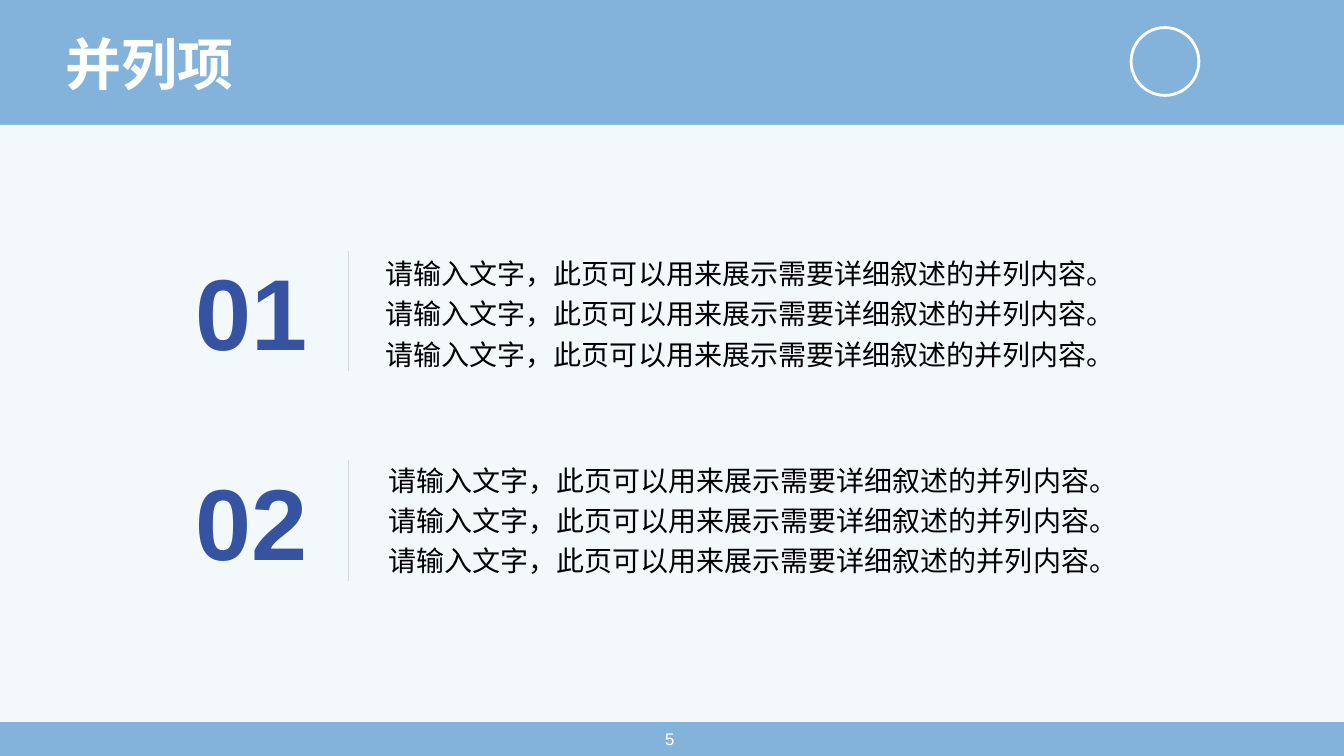
from dataclasses import dataclass

import lxml.etree
import pptx
import pptx.dml.color
import pptx.enum.shapes
import pptx.enum.text
import pptx.oxml.ns
import pptx.shapes.base
import pptx.slide
import pptx.text.text
import pptx.util

Cm = pptx.util.Cm
Pt = pptx.util.Pt
RGBColor = pptx.dml.color.RGBColor
PP_ALIGN = pptx.enum.text.PP_ALIGN
MSO_ANCHOR = pptx.enum.text.MSO_ANCHOR
MSO_SHAPE = pptx.enum.shapes.MSO_SHAPE
qn = pptx.oxml.ns.qn

SKY = RGBColor(0x83, 0xB3, 0xDB)
WHITE = RGBColor(0xFF, 0xFF, 0xFF)
BLACK = RGBColor(0, 0, 0)
NAVY = RGBColor(0x35, 0x53, 0xA0)
GREY = RGBColor(0xD9, 0xD9, 0xD9)

LATIN_FONT = "Arial"
CJK_FONT = "Noto Sans CJK SC"
SLIDE_W, SLIDE_H = 33.87, 19.05
ITEM_TOP, ITEM_PITCH = 6.17, 5.28
RULE_X, RULE_OFFSET, RULE_H = 8.79, 0.15, 3.03
SENTENCE = "请输入文字，此页可以用来展示需要详细叙述的并列内容。"


@dataclass(frozen=True)
class Box:
    left: float
    top: float
    width: float
    height: float

    def lengths(self) -> tuple[pptx.util.Cm, ...]:
        return Cm(self.left), Cm(self.top), Cm(self.width), Cm(self.height)


@dataclass(frozen=True)
class Style:
    size: int
    color: RGBColor
    align: PP_ALIGN
    bold: bool = False
    font: str = LATIN_FONT
    line_spacing: float = 1.0


@dataclass(frozen=True)
class Item:
    number: str
    lines: tuple[str, ...]
    text_left: float
    text_top: float


TITLE = Style(40, WHITE, PP_ALIGN.LEFT, True, CJK_FONT, 0.9)
NUMBER = Style(72, NAVY, PP_ALIGN.CENTER, True)
BODY = Style(20, BLACK, PP_ALIGN.JUSTIFY, line_spacing=1.2)
PAGE = Style(12, WHITE, PP_ALIGN.CENTER)

ITEMS = (
    Item("01", (SENTENCE,) * 3, 9.47, 6.17),
    Item("02", (SENTENCE,) * 3, 9.53, 11.38),
)


def write(tf: pptx.text.text.TextFrame, lines: tuple[str, ...], style: Style,
          anchor: MSO_ANCHOR) -> None:
    tf.word_wrap = True
    tf.auto_size = pptx.enum.text.MSO_AUTO_SIZE.NONE
    tf.vertical_anchor = anchor
    tf.text = "\n".join(lines)
    for p in tf.paragraphs:
        p.alignment = style.align
        p.line_spacing = style.line_spacing
        p.font.name = style.font
        p.font.size = Pt(style.size)
        p.font.bold = style.bold
        p.font.color.rgb = style.color


def add_text(slide: pptx.slide.Slide, box: Box, lines: tuple[str, ...], style: Style,
             anchor: MSO_ANCHOR = MSO_ANCHOR.TOP) -> None:
    sp = slide.shapes.add_textbox(*box.lengths())
    write(sp.text_frame, lines, style, anchor)


def add_white_shape(slide: pptx.slide.Slide, kind: MSO_SHAPE,
                    box: Box) -> pptx.shapes.base.BaseShape:
    sp = slide.shapes.add_shape(kind, *box.lengths())
    sp.shadow.inherit = False
    sp.fill.solid()
    sp.fill.fore_color.rgb = WHITE
    sp.line.fill.background()
    return sp


def set_alpha(sp: pptx.shapes.base.BaseShape, percent: int) -> None:
    color = sp.fill._xPr.find(qn("a:solidFill"))[0]
    lxml.etree.SubElement(color, qn("a:alpha"), val=str(percent * 1000))


def add_rule(slide: pptx.slide.Slide, x: float, top: float, height: float) -> None:
    rule = slide.shapes.add_connector(pptx.enum.shapes.MSO_CONNECTOR.STRAIGHT,
                                      Cm(x), Cm(top), Cm(x), Cm(top + height))
    rule.line.color.rgb = GREY
    rule.line.width = Pt(0.5)
    lxml.etree.SubElement(rule._element.spPr, qn("a:effectLst"))


def add_title(slide: pptx.slide.Slide, box: Box, text: str) -> None:
    title = slide.shapes.title
    title.left, title.top, title.width, title.height = box.lengths()
    write(title.text_frame, (text,), TITLE, MSO_ANCHOR.MIDDLE)
    title.text_frame.paragraphs[0].space_before = Pt(10)


def add_item(slide: pptx.slide.Slide, index: int, item: Item) -> None:
    top = ITEM_TOP + index * ITEM_PITCH
    add_text(slide, Box(item.text_left, item.text_top, 21.74, 3.25), item.lines, BODY)
    add_text(slide, Box(4.62, top, 3.45, 3.33), (item.number,), NUMBER)
    add_rule(slide, RULE_X, top + RULE_OFFSET, RULE_H)


def main() -> None:
    prs = pptx.Presentation()
    prs.slide_width, prs.slide_height = Cm(SLIDE_W), Cm(SLIDE_H)
    slide = prs.slides.add_slide(prs.slide_layouts[5])
    slide.background.fill.solid()
    slide.background.fill.fore_color.rgb = SKY

    panel = add_white_shape(slide, MSO_SHAPE.RECTANGLE, Box(0, 3.15, SLIDE_W, 15.04))
    set_alpha(panel, 91)
    ring = add_white_shape(slide, MSO_SHAPE.DONUT, Box(28.47, 0.66, 1.78, 1.78))
    ring.adjustments[0] = 0.04

    add_title(slide, Box(1.4, 0.86, 18.19, 1.65), "并列项")
    for index, item in enumerate(ITEMS):
        add_item(slide, index, item)
    add_text(slide, Box(13.13, 18.21, 7.62, 0.81), ("5 ",), PAGE, MSO_ANCHOR.MIDDLE)
    prs.save("out.pptx")


if __name__ == "__main__":
    main()
